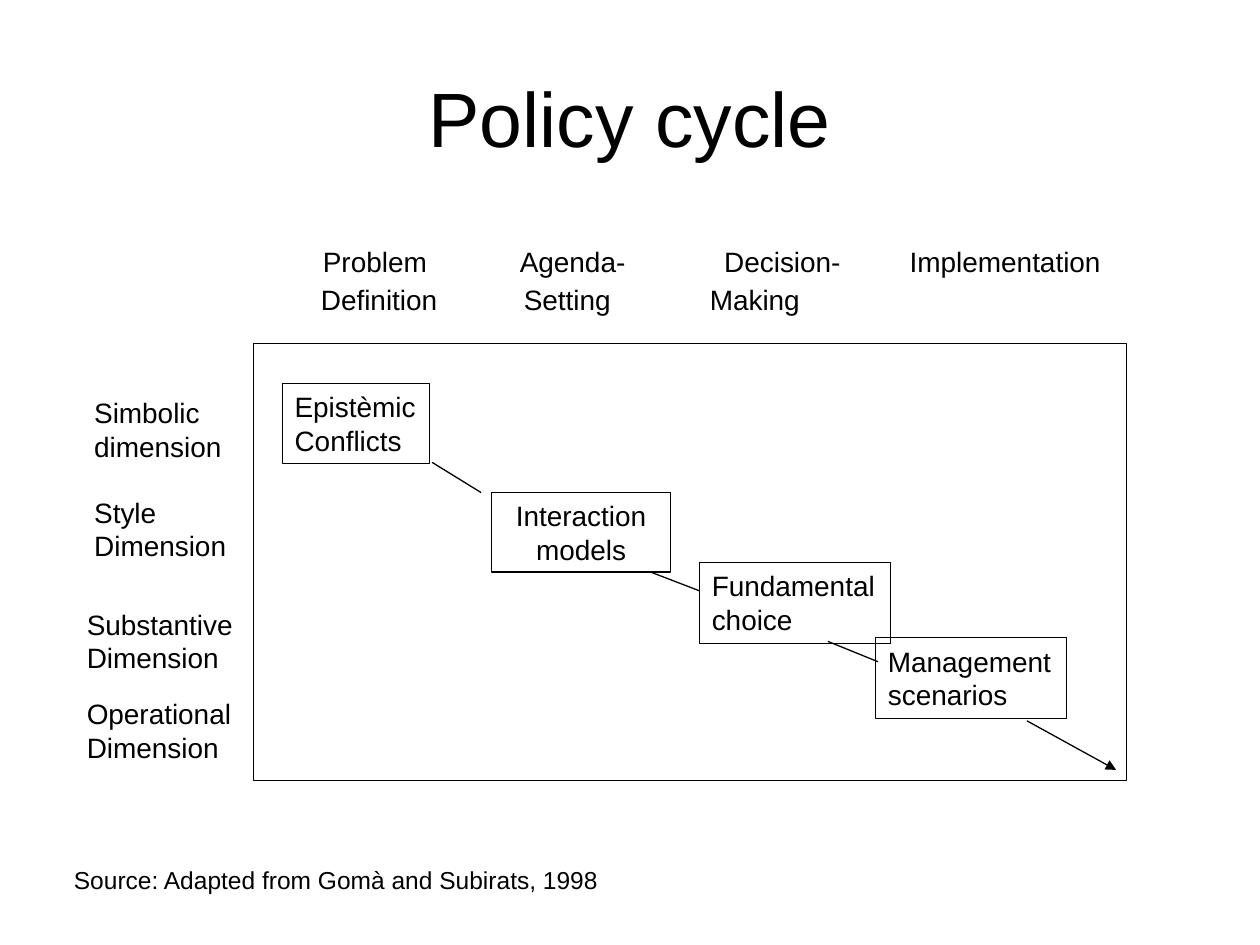
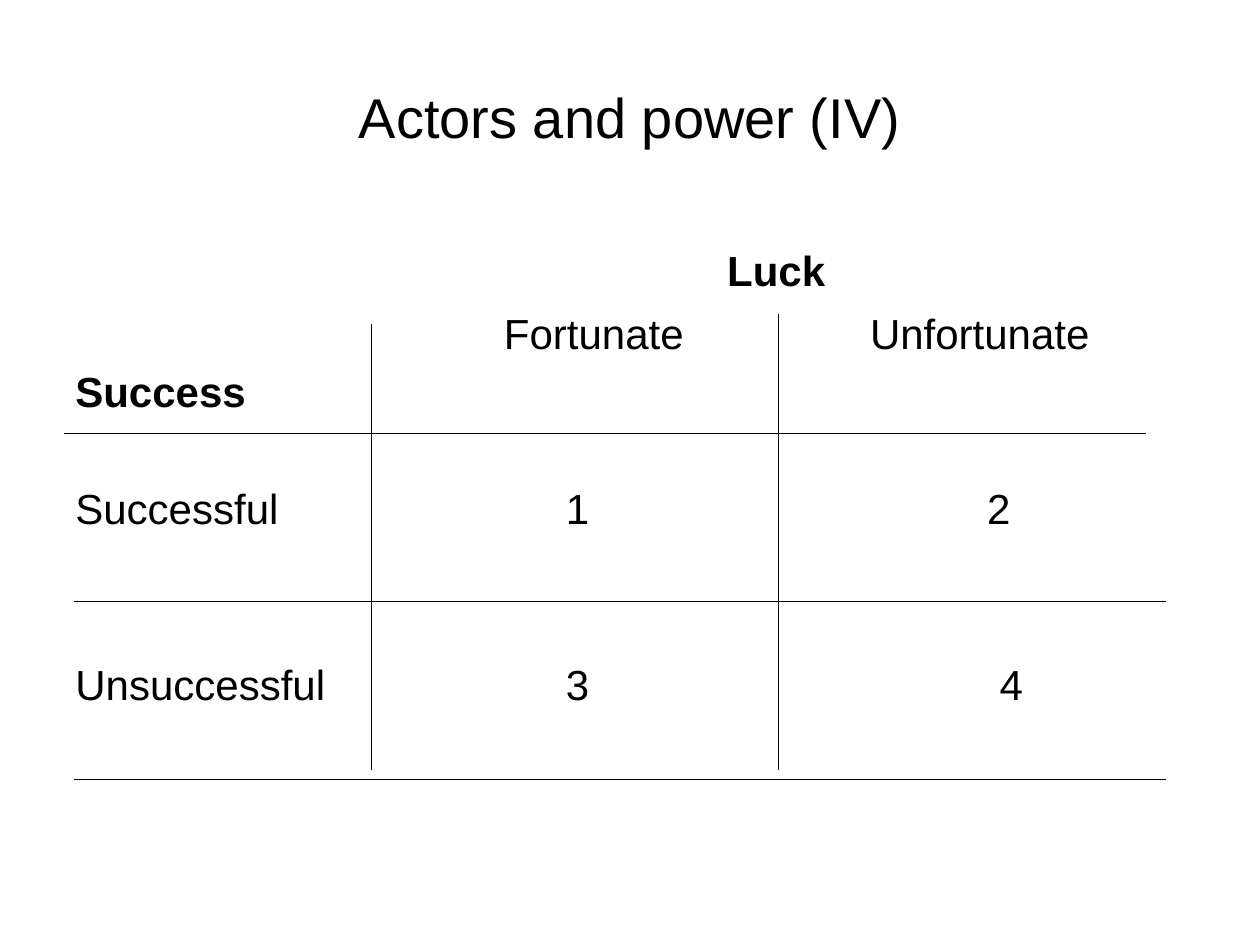
"""Build two slides: the policy cycle and the luck and success matrix."""
from dataclasses import dataclass

from lxml import etree
from pptx import Presentation
from pptx.dml.color import RGBColor
from pptx.enum import shapes, text
from pptx.oxml.ns import qn
from pptx.util import Cm, Pt


@dataclass(frozen=True)
class Theme:
    font: str = "Arial"
    ink: RGBColor = RGBColor(0, 0, 0)
    paper: RGBColor = RGBColor(255, 255, 255)
    title: int = 44
    small_title: int = 32
    matrix: int = 24
    label: int = 16
    source: int = 14
    hairline: float = 0.25
    rule: float = 0.75


theme = Theme()
left, center = text.PP_ALIGN.LEFT, text.PP_ALIGN.CENTER
top, middle = text.MSO_ANCHOR.TOP, text.MSO_ANCHOR.MIDDLE


def write(shape, lines, size, bold=False, align=left, anchor=top, wrap=True):
    frame = shape.text_frame
    frame.text = "\n".join(lines)
    frame_format = {"word_wrap": wrap, "vertical_anchor": anchor}
    for name, value in frame_format.items():
        setattr(frame, name, value)
    font_format = {"name": theme.font, "size": Pt(size), "bold": bold}
    for paragraph in frame.paragraphs:
        paragraph.alignment = align
        for run in paragraph.runs:
            for name, value in font_format.items():
                setattr(run.font, name, value)
            run.font.color.rgb = theme.ink


def connect(slide, x1, y1, x2, y2):
    connector = slide.shapes.add_connector(
        shapes.MSO_CONNECTOR.STRAIGHT, Cm(x1), Cm(y1), Cm(x2), Cm(y2))
    connector.line.color.rgb = theme.ink
    connector.line.width = Pt(theme.rule)
    etree.SubElement(connector.element.spPr, qn("a:effectLst"))
    return connector


deck = Presentation()
deck.slide_width, deck.slide_height = Cm(25.4), Cm(19.05)
blank = deck.slide_layouts[6]
cycle, power = deck.slides.add_slide(blank), deck.slides.add_slide(blank)

for slide, heading, size in [
    (cycle, "Policy cycle", theme.title),
    (power, "Actors and power (IV)", theme.small_title),
]:
    title = slide.shapes.add_textbox(Cm(1.27), Cm(0.76), Cm(22.86), Cm(3.18))
    write(title, [heading], size, align=center, anchor=middle)

stage_rows = [
    (4.8, [("Problem", 6.26), ("Agenda-", 10.23), ("Decision-", 14.35),
           ("Implementation", 18.09)]),
    (5.57, [("Definition", 6.22), ("Setting", 10.31), ("Making", 14.06)]),
]
for y, stages in stage_rows:
    for wording, x in stages:
        stage = cycle.shapes.add_textbox(Cm(x), Cm(y), Cm(4.6), Cm(0.9))
        write(stage, [wording], theme.label)

steps = [
    ([], 5.11, 6.93, 17.6, 8.81, theme.hairline, left),
    (["Interaction", "models"], 9.91, 9.93, 3.61, 1.6, theme.rule, center),
    (["Epistèmic", "Conflicts"], 5.69, 7.72, 2.97, 1.63, theme.hairline, left),
    (["Fundamental", "choice"], 14.1, 11.33, 3.84, 1.63, theme.hairline, left),
    (["Management", "scenarios"], 17.65, 12.85, 3.84, 1.63, theme.hairline, left),
]
for lines, x, y, width, height, weight, align in steps:
    step = cycle.shapes.add_shape(
        shapes.MSO_SHAPE.RECTANGLE, Cm(x), Cm(y), Cm(width), Cm(height))
    step.shadow.inherit = False
    if align == center or not lines:
        step.fill.solid()
        step.fill.fore_color.rgb = theme.paper
    else:
        step.fill.background()
    step.line.color.rgb = theme.ink
    step.line.width = Pt(weight)
    if lines:
        write(step, lines, theme.label, align=align, anchor=middle, wrap=False)

for ends in [
    (8.71, 9.32, 9.7, 9.93),
    (13.11, 11.53, 14.1, 11.91),
    (16.69, 12.93, 17.7, 13.34),
    (20.7, 14.53, 22.5, 15.52),
]:
    path_on = connect(cycle, *ends)
etree.SubElement(path_on.line._get_or_add_ln(), qn("a:tailEnd"), type="triangle")

dimensions = [
    (["Simbolic", "dimension"], 1.65, 7.85),
    (["Style", "Dimension"], 1.65, 9.86),
    (["Substantive", "Dimension"], 1.5, 12.12),
    (["Operational", "Dimension"], 1.5, 13.92),
]
for lines, x, y in dimensions:
    dimension = cycle.shapes.add_textbox(Cm(x), Cm(y), Cm(3.6), Cm(1.63))
    write(dimension, lines, theme.label)

source = cycle.shapes.add_textbox(Cm(1.24), Cm(17.32), Cm(11.6), Cm(0.86))
write(source, ["Source: Adapted from Gomà and Subirats, 1998"], theme.source)

first_row, row_pitch = 6.07, 1.18
matrix = [
    ("Luck", 14.41, -1.07, True),
    ("Fortunate", 9.91, 0, False),
    ("Unfortunate", 17.29, 0, False),
    ("Success", 1.27, 1, True),
    ("Successful", 1.27, 3, False),
    ("1", 11.16, 3, False),
    ("2", 19.65, 3, False),
    ("Unsuccessful", 1.27, 6, False),
    ("3", 11.16, 6, False),
    ("4", 19.9, 6, False),
]
for wording, x, row, bold in matrix:
    entry = power.shapes.add_textbox(
        Cm(x), Cm(first_row + row * row_pitch), Cm(5.8), Cm(1.22))
    write(entry, [wording], theme.matrix, bold)

for ends in [
    (1.5, 12.12, 23.5, 12.12),
    (15.7, 6.32, 15.7, 15.52),
    (7.49, 6.53, 7.49, 15.52),
    (1.3, 8.74, 23.11, 8.74),
    (1.5, 15.72, 23.5, 15.72),
]:
    connect(power, *ends)

deck.save("out.pptx")
